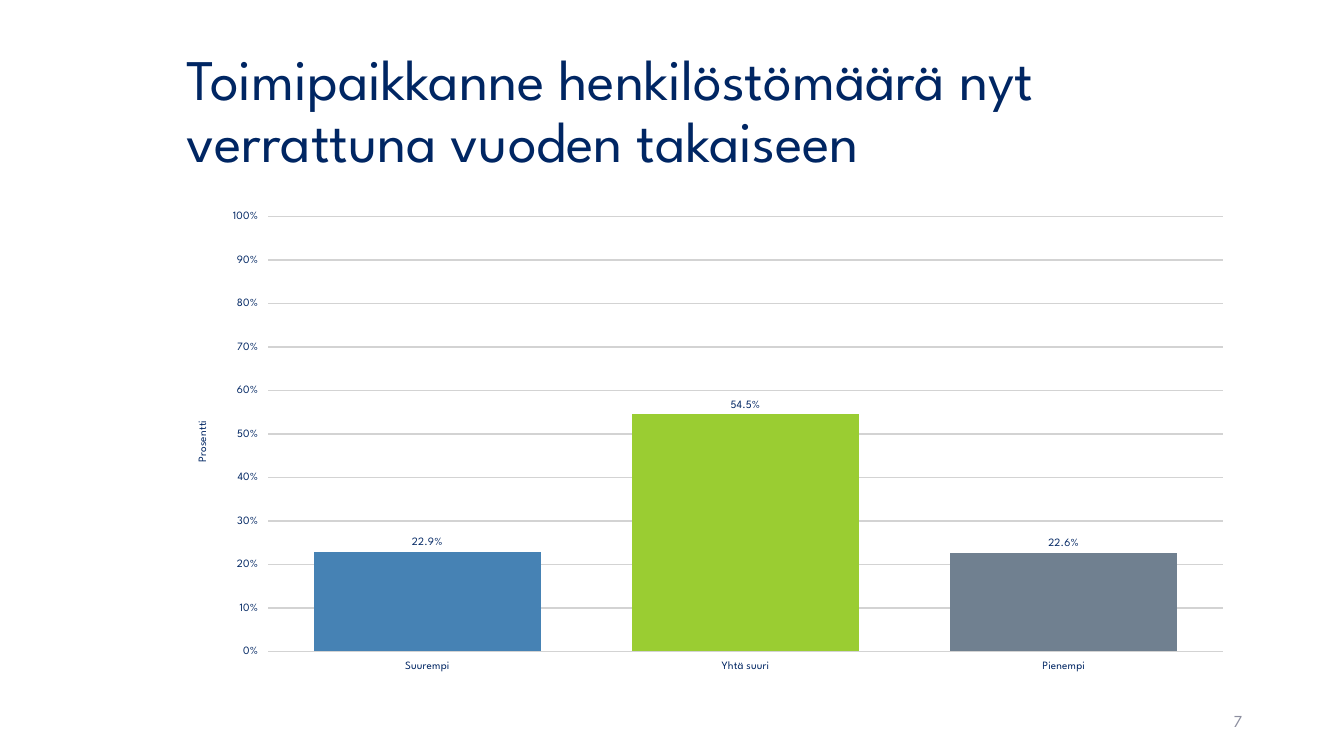
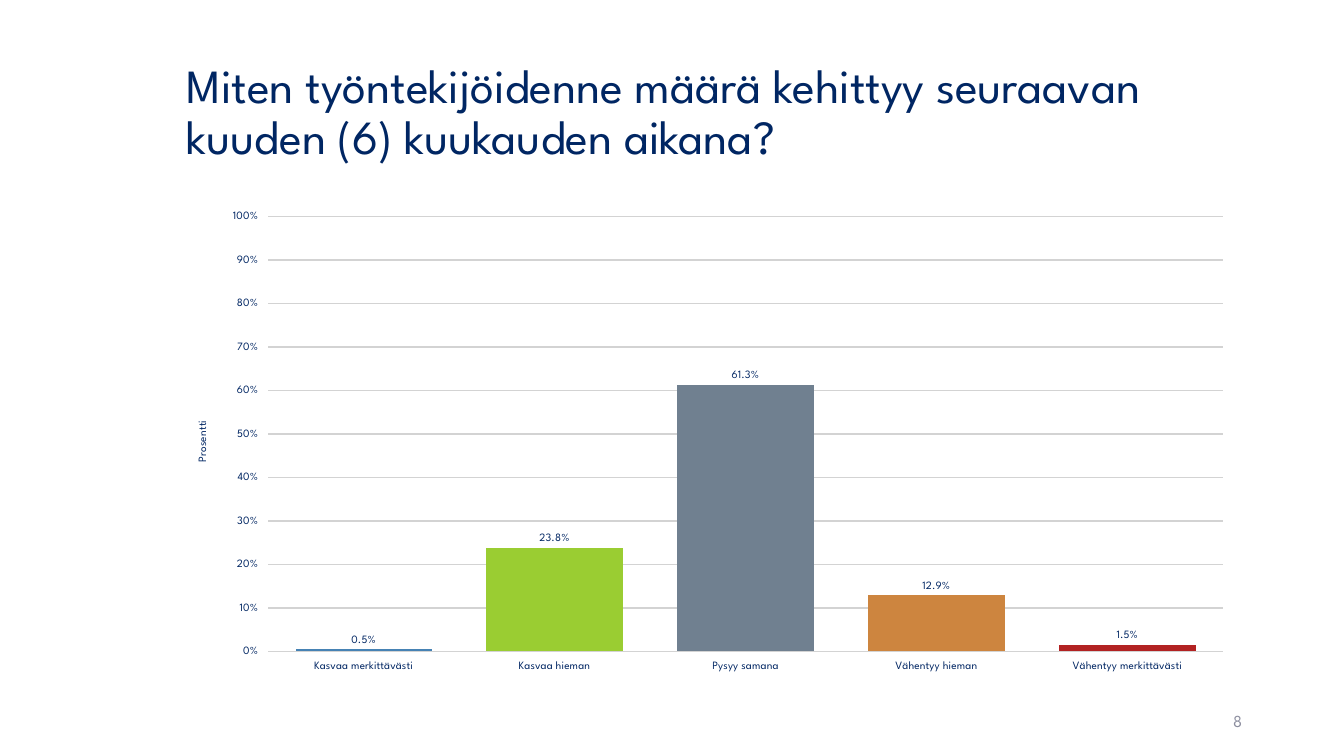
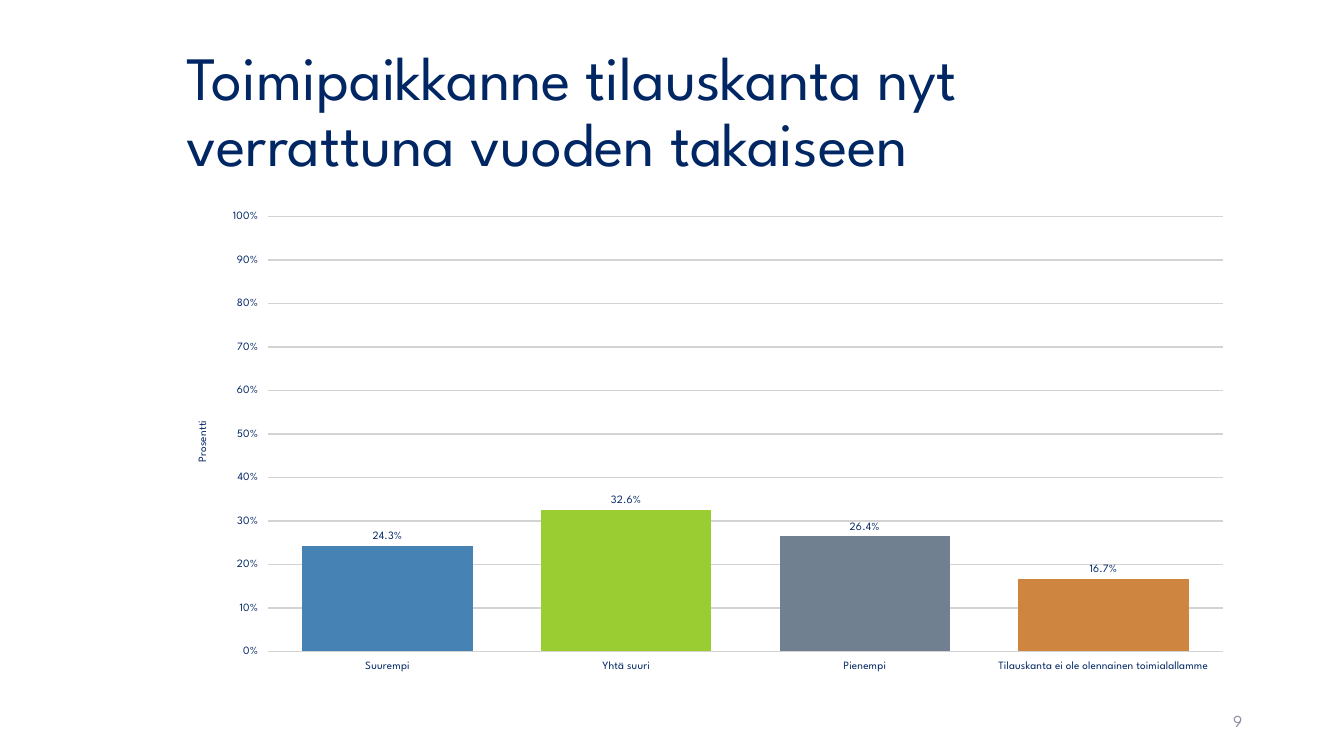
from dataclasses import dataclass

from pptx import Presentation
from pptx import util as u
from pptx.chart.data import CategoryChartData
from pptx.dml.color import RGBColor
from pptx.enum import chart as ch
from pptx.enum import text as tx


@dataclass(frozen=True)
class Theme:
    face: str = "League Spartan"
    navy: str = "002663"
    gray: str = "8C8E9F"
    grid: str = "D3D3D3"
    bars: tuple[str, ...] = ("4682B4", "9ACD32", "708090", "CD853F", "B22222")
    base: int = 18
    small: int = 8
    foot: int = 12


@dataclass(frozen=True)
class Box:
    left: float
    top: float
    width: float
    height: float

    def place(self) -> tuple[u.Length, ...]:
        return tuple(map(u.Inches, (self.left, self.top, self.width, self.height)))


@dataclass(frozen=True)
class Topic:
    title: str
    size: int
    shares: dict[str, float]


THEME = Theme()
HEAD = Box(1.75, 0.4, 10.59, 1.45)
PLOT = Box(1.75, 2, 10.59, 4.76)
FOOT = Box(9.42, 6.95, 3, 0.4)
FIRST = 7

TOPICS = (
    Topic(
        "Toimipaikkanne henkilöstömäärä nyt verrattuna vuoden takaiseen",
        41,
        {"Suurempi": 0.229, "Yhtä suuri": 0.545, "Pienempi": 0.226},
    ),
    Topic(
        "Miten työntekijöidenne määrä kehittyy seuraavan kuuden (6) kuukauden aikana?",
        34,
        {
            "Kasvaa merkittävästi": 0.005,
            "Kasvaa hieman": 0.238,
            "Pysyy samana": 0.613,
            "Vähentyy hieman": 0.129,
            "Vähentyy merkittävästi": 0.015,
        },
    ),
    Topic(
        "Toimipaikkanne tilauskanta nyt verrattuna vuoden takaiseen",
        44,
        {
            "Suurempi": 0.243,
            "Yhtä suuri": 0.326,
            "Pienempi": 0.264,
            "Tilauskanta ei ole olennainen toimialallamme": 0.167,
        },
    ),
)


def style(font, size: int, color: str = THEME.navy) -> None:
    font.name = THEME.face
    font.size = u.Pt(size)
    font.bold = False
    font.color.rgb = RGBColor.from_string(color)


def paint(fill, color: str) -> None:
    fill.solid()
    fill.fore_color.rgb = RGBColor.from_string(color)


def write(shape, words: str, size: int, color: str, align):
    frame = shape.text_frame
    frame.text = words
    frame.word_wrap = True
    frame.auto_size = tx.MSO_AUTO_SIZE.NONE
    frame.vertical_anchor = tx.MSO_ANCHOR.MIDDLE
    para = frame.paragraphs[0]
    para.alignment = align
    style(para.font, size, color)
    return para


def add_title(slide, topic: Topic) -> None:
    title = slide.shapes.title
    title.left, title.top, title.width, title.height = HEAD.place()
    para = write(title, topic.title, topic.size, THEME.navy, tx.PP_ALIGN.LEFT)
    para.line_spacing = 0.9


def add_number(slide, number: int) -> None:
    box = slide.shapes.add_textbox(*FOOT.place())
    para = write(box, str(number), THEME.foot, THEME.gray, tx.PP_ALIGN.RIGHT)
    para.space_after = u.Pt(6)


def add_bars(slide, shares: dict[str, float]) -> None:
    data = CategoryChartData(number_format="0.0%")
    data.categories = shares.keys()
    data.add_series("Series 1", shares.values())
    kind = ch.XL_CHART_TYPE.COLUMN_CLUSTERED
    chart = slide.shapes.add_chart(kind, *PLOT.place(), data).chart
    chart.has_legend = False
    chart.has_title = False
    style(chart.font, THEME.base)

    for axis in (chart.category_axis, chart.value_axis):
        axis.major_tick_mark = ch.XL_TICK_MARK.OUTSIDE
        axis.format.line.fill.background()
        style(axis.tick_labels.font, THEME.small)

    scale = chart.value_axis
    scale.minimum_scale, scale.maximum_scale = 0, 1
    scale.major_unit = 0.1
    scale.tick_labels.number_format = "0%"
    scale.tick_labels.number_format_is_linked = False
    scale.has_major_gridlines = True
    grid = scale.major_gridlines.format.line
    grid.width = u.Pt(1)
    paint(grid.fill, THEME.grid)
    label = scale.axis_title.text_frame
    label.text = "Prosentti"
    style(label.paragraphs[0].font, THEME.small)

    plot = chart.plots[0]
    plot.gap_width = 40
    plot.overlap = -2
    plot.vary_by_categories = False
    series = plot.series[0]
    paint(series.format.fill, THEME.bars[0])
    for index, color in enumerate(THEME.bars[:len(shares)]):
        paint(series.points[index].format.fill, color)

    labels = series.data_labels
    labels.show_value = True
    labels.number_format = "0.0%"
    labels.number_format_is_linked = False
    labels.position = ch.XL_LABEL_POSITION.OUTSIDE_END
    style(labels.font, THEME.small)


def main() -> None:
    deck = Presentation()
    deck.slide_width = u.Inches(13.33)
    deck.slide_height = u.Inches(7.5)
    layout = deck.slide_layouts.get_by_name("Title Only")
    for number, topic in enumerate(TOPICS, FIRST):
        slide = deck.slides.add_slide(layout)
        add_title(slide, topic)
        add_number(slide, number)
        add_bars(slide, topic.shares)
    deck.save("out.pptx")


if __name__ == "__main__":
    main()
